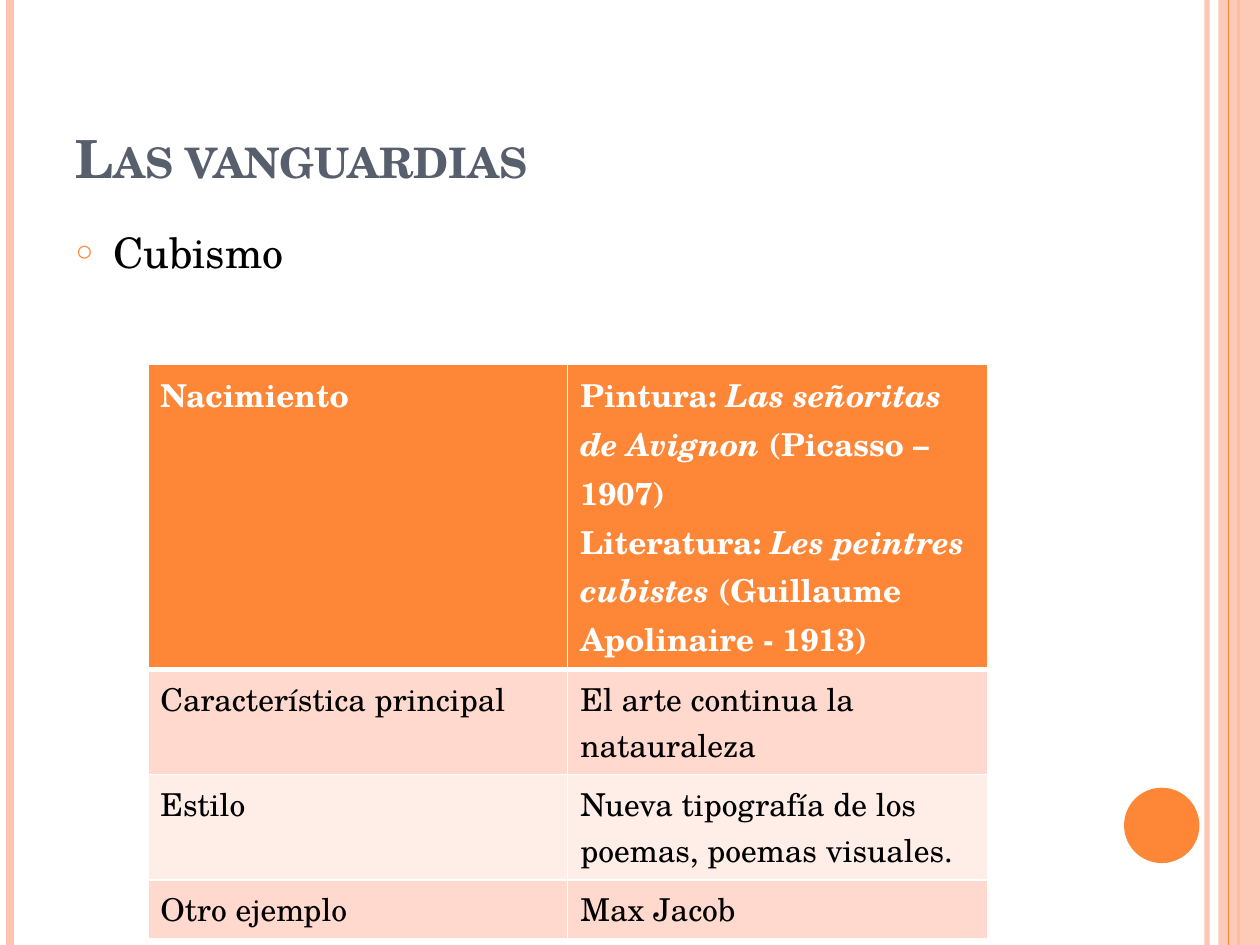
from lxml import etree
from pptx import Presentation
from pptx.dml.color import RGBColor
from pptx.enum import shapes, text
from pptx.oxml import parse_xml
from pptx.oxml.ns import nsdecls, qn
from pptx.util import Cm, Pt

ORANGE = RGBColor(0xFE, 0x86, 0x37)
PEACH = RGBColor(0xFE, 0xC3, 0xAE)
SLATE = RGBColor(0x57, 0x5F, 0x6D)
BAND_DARK = RGBColor(0xFF, 0xD9, 0xCE)
BAND_LIGHT = RGBColor(0xFF, 0xED, 0xE8)
BLACK = RGBColor(0, 0, 0)
WHITE = RGBColor(0xFF, 0xFF, 0xFF)

WIDTH, HEIGHT = 25.4, 19.05
ROWS = [
    ("Nacimiento",
     "Pintura: |Las señoritas de Avignon |(Picasso – 1907)\n"
     "Literatura: |Les peintres cubistes |(Guillaume Apolinaire - 1913)"),
    ("Característica principal", "El arte continua la natauraleza"),
    ("Estilo", "Nueva tipografía de los poemas, poemas visuales."),
    ("Otro ejemplo", "Max Jacob"),
]


def set_alpha(fill_parent, percent):
    color = next(fill_parent.iter(qn("a:srgbClr")))
    etree.SubElement(color, qn("a:alpha")).set("val", str(percent * 1000))


class SlideBuilder:
    font = "TeX Gyre Schola"

    def __init__(self, slide):
        self.s = slide

    def add_text(self, tf, content, size, color, bold=False):
        """Fill a frame: newlines part paragraphs, bars enclose italics."""
        for i, line in enumerate(content.split("\n")):
            p = tf.paragraphs[0] if i == 0 else tf.add_paragraph()
            for j, part in enumerate(line.split("|")):
                r = p.add_run()
                r.text = part
                f = r.font
                f.name, f.size, f.bold = self.font, Pt(size), bold
                f.italic = j % 2 == 1
                f.color.rgb = color

    def placeholder(self, idx, box, content, size, color, bold=False):
        sp = self.s.placeholders[idx]
        sp.left, sp.top, sp.width, sp.height = map(Cm, box)
        tf = sp.text_frame
        tf.auto_size = text.MSO_AUTO_SIZE.NONE
        self.add_text(tf, content, size, color, bold)
        tf.paragraphs[0].alignment = text.PP_ALIGN.LEFT
        return tf

    def title(self, box, content):
        tf = self.placeholder(0, box, content, 30, SLATE, bold=True)
        tf.vertical_anchor = text.MSO_ANCHOR.BOTTOM
        tf.paragraphs[0].runs[0].font._element.set("cap", "small")

    def bullet(self, box, content):
        tf = self.placeholder(1, box, content, 24, BLACK)
        p = tf.paragraphs[0]
        p.space_before = Pt(6)
        pPr = p._p.get_or_add_pPr()
        pPr.set("marL", str(Cm(0.76)))
        pPr.set("indent", str(-Cm(0.76)))
        for xml in (f'<a:buClr {nsdecls("a")}><a:srgbClr val="{ORANGE}"/></a:buClr>',
                    f'<a:buSzPct {nsdecls("a")} val="70000"/>',
                    f'<a:buChar {nsdecls("a")} char="○"/>'):
            pPr.append(parse_xml(xml))

    def vertical_line(self, x, color, width, alpha=None):
        c = self.s.shapes.add_connector(
            shapes.MSO_CONNECTOR.STRAIGHT, Cm(x), 0, Cm(x), Cm(HEIGHT))
        c.line.color.rgb = color
        c.line.width = Pt(width)
        etree.SubElement(c._element.spPr, qn("a:effectLst"))
        if alpha:
            set_alpha(c._element.spPr, alpha)

    def shape(self, kind, box, color, alpha=None):
        sp = self.s.shapes.add_shape(kind, *map(Cm, box))
        sp.shadow.inherit = False
        sp.fill.solid()
        sp.fill.fore_color.rgb = color
        sp.line.fill.background()
        if alpha:
            set_alpha(sp._element.spPr, alpha)

    def borders(self, cell, **widths):
        """Draw white cell borders; widths in points by side L, R, T, B."""
        tcPr = cell._tc.get_or_add_tcPr()
        for i, (side, width) in enumerate(widths.items()):
            tcPr.insert(i, parse_xml(
                f'<a:ln{side} {nsdecls("a")} w="{Pt(width)}"><a:solidFill>'
                f'<a:srgbClr val="{WHITE}"/></a:solidFill></a:ln{side}>'))

    def table(self, left, top, width, row_height, rows):
        table = self.s.shapes.add_table(
            len(rows), len(rows[0]), Cm(left), Cm(top),
            Cm(width), Cm(row_height * len(rows))).table
        for i, row in enumerate(rows):
            header = i == 0
            band = BAND_DARK if i % 2 else BAND_LIGHT
            for j, content in enumerate(row):
                cell = table.cell(i, j)
                cell.fill.solid()
                cell.fill.fore_color.rgb = ORANGE if header else band
                self.add_text(cell.text_frame, content, 18,
                              WHITE if header else BLACK, bold=header)
                self.borders(cell, L=1, R=1, T=3 if i == 1 else 1,
                             B=3 if header else 1)


def main():
    prs = Presentation()
    prs.slide_width, prs.slide_height = Cm(WIDTH), Cm(HEIGHT)
    b = SlideBuilder(prs.slides.add_slide(prs.slide_layouts[1]))

    b.vertical_line(24.33, PEACH, 3, alpha=93)
    b.vertical_line(0.2, PEACH, 4.5)
    b.vertical_line(24.97, ORANGE, 1.5)
    b.shape(shapes.MSO_SHAPE.RECTANGLE, (24.56, 0, 0.84, HEIGHT), PEACH, alpha=87)
    b.vertical_line(24.77, ORANGE, 0.75)
    b.shape(shapes.MSO_SHAPE.OVAL, (22.66, 15.88, 1.52, 1.52), ORANGE)

    b.title((1.27, 0.76, 20.75, 3.18), "Las vanguardias")
    b.bullet((1.27, 4.44, 20.75, 13.54), "Cubismo")
    b.table(2.98, 7.35, 16.93, 1.03, ROWS)
    prs.save("out.pptx")


if __name__ == "__main__":
    main()
